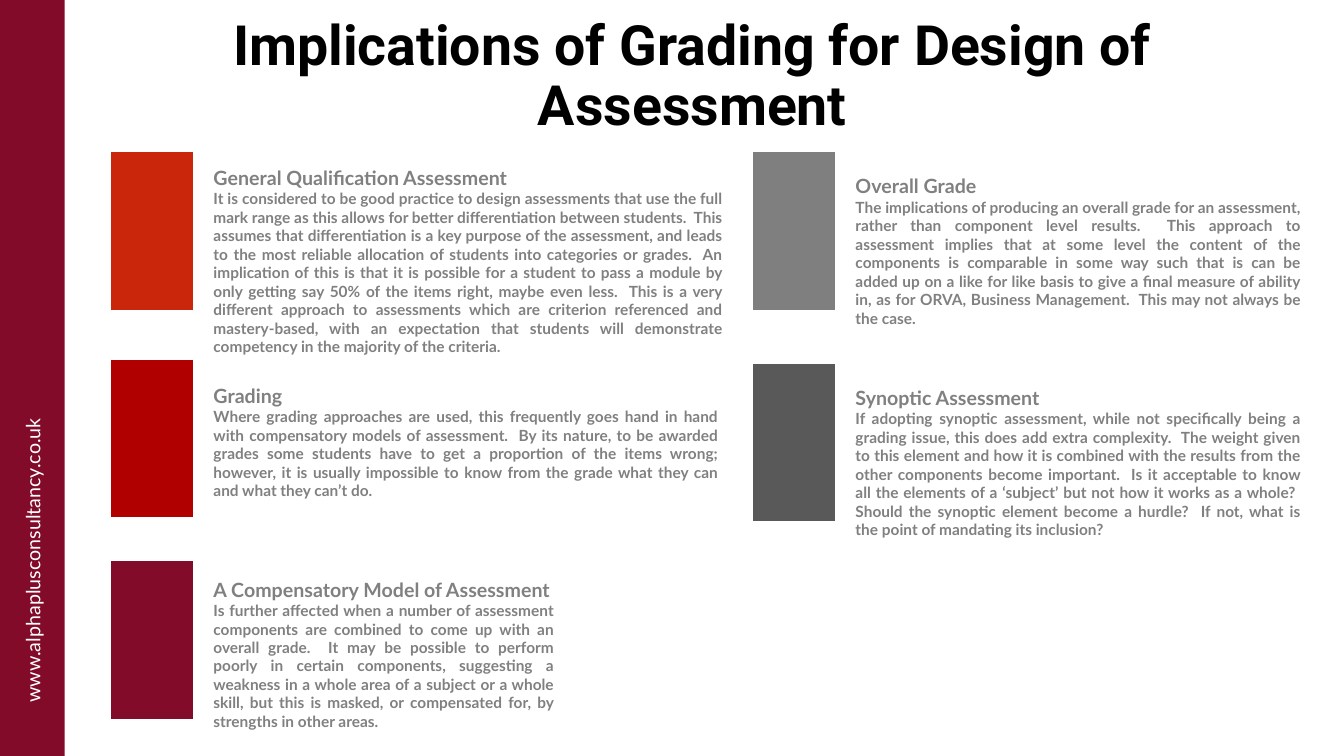
"""Build the slide on what grading implies for the design of assessment."""
from dataclasses import dataclass

from pptx import Presentation
from pptx.dml.color import RGBColor
from pptx.enum.shapes import MSO_SHAPE
from pptx.enum.text import MSO_ANCHOR, MSO_AUTO_SIZE, PP_ALIGN
from pptx.shapes.autoshape import Shape
from pptx.slide import Slide
from pptx.util import Cm, Pt

WINE, GREY, WHITE = "810B29", "808080", "FFFFFF"
LEFT, RIGHT = 2.76, 18.94
TEXT_GAP = 2.37


@dataclass
class Topic:
    hue: str
    left: float
    top: float
    text_top: float
    width: float
    height: float
    head: str
    body: str


TOPICS = [
    Topic("C9260B", LEFT, 3.8, 4.06, 13.34, 5.08, "General Qualification Assessment",
          "It is considered to be good practice to design assessments that use the full "
          "mark range as this allows for better differentiation between students.  This "
          "assumes that differentiation is a key purpose of the assessment, and leads to "
          "the most reliable allocation of students into categories or grades.  An "
          "implication of this is that it is possible for a student to pass a module by "
          "only getting say 50% of the items right, maybe even less.  This is a very "
          "different approach to assessments which are criterion referenced and "
          "mastery-based, with an expectation that students will demonstrate competency "
          "in the majority of the criteria."),
    Topic("B00000", LEFT, 9.03, 9.55, 13.23, 3.2, "Grading",
          "Where grading approaches are used, this frequently goes hand in hand with "
          "compensatory models of assessment.  By its nature, to be awarded grades some "
          "students have to get a proportion of the items wrong; however, it is usually "
          "impossible to know from the grade what they can and what they can’t do."),
    Topic(WINE, LEFT, 14.11, 14.43, 9.09, 4.14, "A Compensatory Model of Assessment",
          "Is further affected when a number of assessment components are combined to "
          "come up with an overall grade.  It may be possible to perform poorly in "
          "certain components, suggesting a weakness in a whole area of a subject or a "
          "whole skill, but this is masked, or compensated for, by strengths in other "
          "areas."),
    Topic("7F7F7F", RIGHT, 3.8, 4.27, 11.73, 4.14, "Overall Grade",
          "The implications of producing an overall grade for an assessment, rather than "
          "component level results.  This approach to assessment implies that at some "
          "level the content of the components is comparable in some way such that is can "
          "be added up on a like for like basis to give a final measure of ability in, as "
          "for ORVA, Business Management.  This may not always be the case."),
    Topic("595959", RIGHT, 9.13, 9.6, 11.73, 4.14, "Synoptic Assessment",
          "If adopting synoptic assessment, while not specifically being a grading issue, "
          "this does add extra complexity.  The weight given to this element and how it "
          "is combined with the results from the other components become important.  Is "
          "it acceptable to know all the elements of a ‘subject’ but not how it works as "
          "a whole?  Should the synoptic element become a hurdle?  If not, what is the "
          "point of mandating its inclusion?"),
]


def tint(code: str) -> RGBColor:
    return RGBColor.from_string(code)


def add_block(slide: Slide, left: float, top: float, width: float, height: float,
              hue: str, edge: bool = True) -> None:
    block = slide.shapes.add_shape(MSO_SHAPE.RECTANGLE, Cm(left), Cm(top),
                                   Cm(width), Cm(height))
    block.shadow.inherit = False
    block.fill.solid()
    block.fill.fore_color.rgb = tint(hue)
    if edge:
        block.line.color.rgb = tint(WHITE)
        block.line.width = Pt(2)
    else:
        block.line.fill.background()


def add_box(slide: Slide, left: float, top: float, width: float, height: float,
            anchor: MSO_ANCHOR = MSO_ANCHOR.MIDDLE) -> Shape:
    box = slide.shapes.add_textbox(Cm(left), Cm(top), Cm(width), Cm(height))
    box.text_frame.word_wrap = True
    box.text_frame.vertical_anchor = anchor
    return box


def write(box: Shape, text: str, *, size: float, hue: str, face: str = "Lato",
          bold: bool = True, align: PP_ALIGN = PP_ALIGN.CENTER,
          pitch: float = 1.0) -> None:
    frame = box.text_frame
    para = frame.add_paragraph() if frame.text else frame.paragraphs[0]
    para.alignment = align
    para.line_spacing = pitch
    run = para.add_run()
    run.text = text
    run.font.name = face
    run.font.size = Pt(size)
    run.font.bold = bold
    run.font.color.rgb = tint(hue)


def add_topic(slide: Slide, topic: Topic) -> None:
    add_block(slide, topic.left, topic.top, 2.13, 4.04, topic.hue)
    box = add_box(slide, topic.left + TEXT_GAP, topic.text_top, topic.width,
                  topic.height, MSO_ANCHOR.TOP)
    box.text_frame.auto_size = MSO_AUTO_SIZE.SHAPE_TO_FIT_TEXT
    write(box, topic.head, size=14, hue=GREY, align=PP_ALIGN.LEFT)
    write(box, topic.body, size=11, hue=GREY, align=PP_ALIGN.JUSTIFY)


def main() -> None:
    deck = Presentation()
    deck.slide_width, deck.slide_height = Cm(33.87), Cm(19.05)
    slide = deck.slides.add_slide(deck.slide_layouts[6])

    add_block(slide, 0, 0, 1.63, 19.05, WINE, edge=False)
    site = add_box(slide, -3.28, 13.61, 8.2, 1.02)
    site.rotation = 270
    write(site, "www.alphaplusconsultancy.co.uk", size=14, hue=WHITE, bold=False)

    title = add_box(slide, 2.59, 0.81, 29.72, 2.29)
    write(title, "Implications of Grading for Design of Assessment", size=39.6,
          hue="000000", face="Roboto", pitch=0.9)

    for topic in TOPICS:
        add_topic(slide, topic)
    deck.save("out.pptx")


if __name__ == "__main__":
    main()
